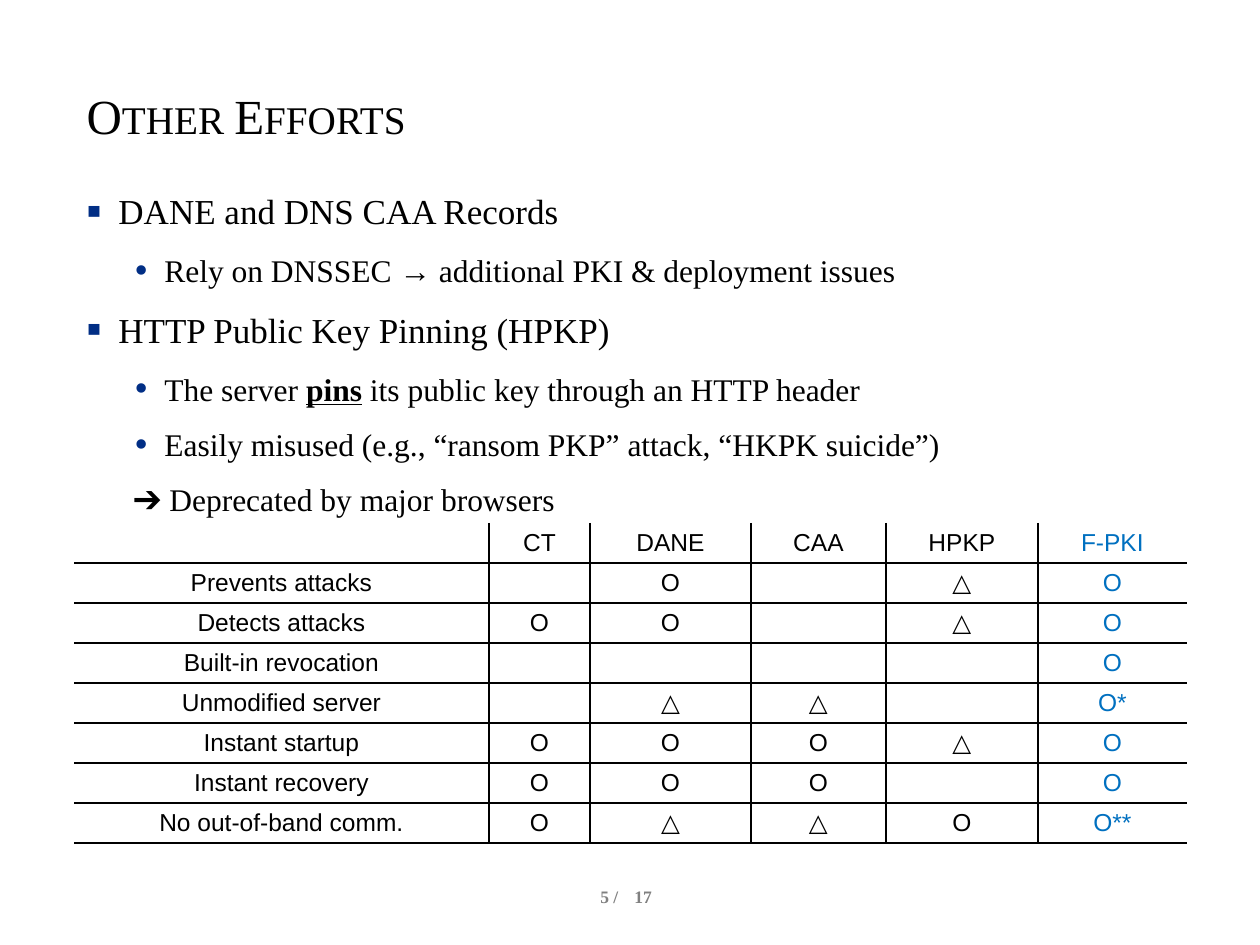
from lxml.etree import SubElement
from pptx import Presentation
from pptx.dml.color import RGBColor
from pptx.enum.text import MSO_ANCHOR as Anchor, MSO_AUTO_SIZE as AutoSize, PP_ALIGN as Align
from pptx.oxml.ns import qn
from pptx.util import Emu, Pt

SERIF, SANS = "Times New Roman", "Arial"
BLACK, NAVY, BLUE, GREY = "000000", "012E85", "0070C0", "808080"


def px(n):
    return Emu(round(n * 914400 / 126))


def add_run(paragraph, text, size, face, color, bold=False):
    run = paragraph.add_run()
    run.text = text
    run.font.size, run.font.name, run.font.bold = Pt(size), face, bold
    run.font.color.rgb = RGBColor.from_string(color)
    return run


prs = Presentation()
prs.slide_width, prs.slide_height = px(1260), px(945)
slide = prs.slides.add_slide(prs.slide_layouts[5])

# Title
title = slide.shapes.title
title.left, title.top, title.width, title.height = px(74), px(87), px(1113), px(63)
title.text_frame.auto_size = AutoSize.NONE
title.text_frame.vertical_anchor = Anchor.MIDDLE
heading = title.text_frame.paragraphs[0]
heading.alignment, heading.line_spacing = Align.LEFT, 0.9
heading_run = add_run(heading, "Other Efforts", 28, SERIF, BLACK)
heading_run._r.get_or_add_rPr().set("cap", "small")

# Bullets: marker, runs; the word "pins" is emphasised
points = [
    ("▪", ["DANE and DNS CAA Records"]),
    ("•", ["Rely on DNSSEC → additional PKI & deployment issues"]),
    ("▪", ["HTTP Public Key Pinning (HPKP)"]),
    ("•", ["The server ", "pins", " its public key through an HTTP header"]),
    ("•", ["Easily misused (e.g., “ransom PKP” attack, “HKPK suicide”)"]),
    (None, ["➔ Deprecated by major browsers"]),
]
# marker: level, left margin, indent, text size, spacing
levels = {"▪": (0, 32, -32, 20, 6), "•": (1, 78, -30, 18, 5), None: (1, 47, 0, 18, 5)}
body = slide.shapes.add_textbox(px(74), px(179), px(1113), px(693)).text_frame
body.word_wrap = True
body.margin_top = px(11)
for i, (marker, parts) in enumerate(points):
    level, margin, indent, size, gap = levels[marker]
    point = body.add_paragraph() if i else body.paragraphs[0]
    point.level = level
    point.space_before, point.space_after = Pt(gap if i else 0), Pt(gap)
    pPr = point._p.get_or_add_pPr()
    pPr.set("marL", str(px(margin)))
    pPr.set("indent", str(px(indent)))
    if marker:
        SubElement(SubElement(pPr, qn("a:buClr")), qn("a:srgbClr"), val=NAVY)
        SubElement(pPr, qn("a:buSzPct"), val="125000")
        SubElement(pPr, qn("a:buFont"), typeface=SERIF)
        SubElement(pPr, qn("a:buChar"), char=marker)
    else:
        SubElement(pPr, qn("a:buNone"))
    for part in parts:
        strong = part == "pins"
        add_run(point, part, size, SERIF, BLACK, strong).font.underline = strong

# Comparison table
rows = [
    ["", "CT", "DANE", "CAA", "HPKP", "F-PKI"],
    ["Prevents attacks", "", "O", "", "△", "O"],
    ["Detects attacks", "O", "O", "", "△", "O"],
    ["Built-in revocation", "", "", "", "", "O"],
    ["Unmodified server", "", "△", "△", "", "O*"],
    ["Instant startup", "O", "O", "O", "△", "O"],
    ["Instant recovery", "O", "O", "O", "", "O"],
    ["No out-of-band comm.", "O", "△", "△", "O", "O**"],
]
widths = [415, 101, 161, 135, 152, 149]
comparison = slide.shapes.add_table(
    len(rows), len(widths), px(74), px(523), px(sum(widths)), px(40 * len(rows))).table
comparison.first_row = comparison.horz_banding = False
for column, width in zip(comparison.columns, widths):
    column.width = px(width)
last = len(widths) - 1
for r, row in enumerate(rows):
    comparison.rows[r].height = px(40)
    for c, mark in enumerate(row):
        cell = comparison.cell(r, c)
        cell.vertical_anchor = Anchor.MIDDLE
        cell.margin_top = cell.margin_bottom = px(3)
        # Rules run between cells and below the last row
        ruled = {"a:lnL": c > 0, "a:lnR": c < last, "a:lnT": r > 0, "a:lnB": True}
        for side, drawn in ruled.items():
            line = SubElement(cell._tc.get_or_add_tcPr(), qn(side), w=str(Pt(1)))
            if drawn:
                SubElement(SubElement(line, qn("a:solidFill")), qn("a:srgbClr"), val=BLACK)
            else:
                SubElement(line, qn("a:noFill"))
        cell.fill.background()
        entry = cell.text_frame.paragraphs[0]
        entry.alignment = Align.CENTER
        if mark:
            add_run(entry, mark, 14, SANS, BLUE if c == last else BLACK)
        else:
            SubElement(entry._p, qn("a:endParaRPr"), sz="1400")

# Page number and page count
for left, number in ((588, "5 /"), (622, "17")):
    footer = slide.shapes.add_textbox(px(left), px(879), px(82), px(34)).text_frame
    footer.word_wrap = True
    footer.vertical_anchor = Anchor.MIDDLE
    add_run(footer.paragraphs[0], number, 10, SERIF, GREY, True)

prs.save("out.pptx")
